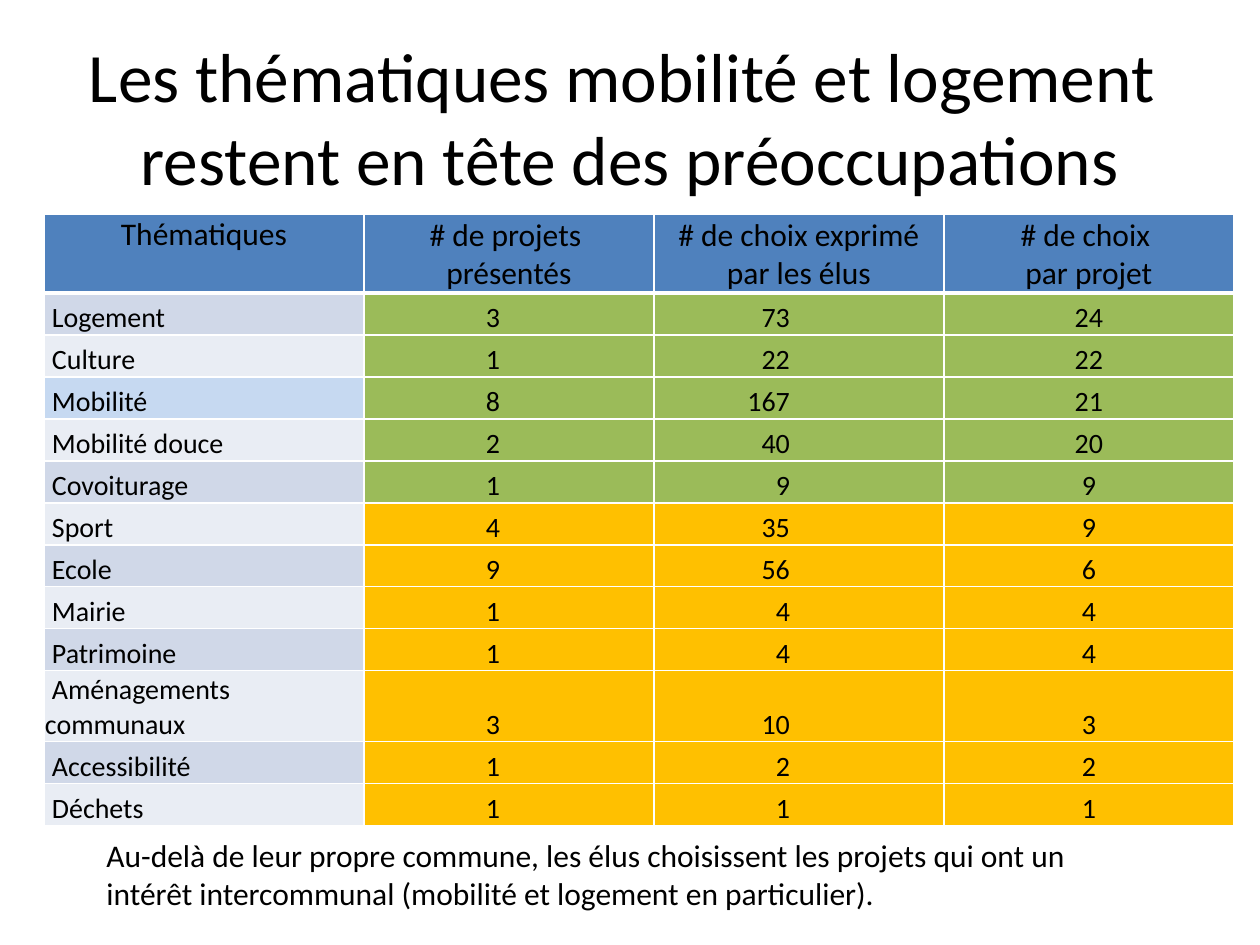
from dataclasses import dataclass

from lxml import etree
from pptx import Presentation, util as u
from pptx.dml.color import RGBColor
from pptx.enum import text
from pptx.oxml.ns import qn

PX = 914400 // 126
ALIGN = text.PP_ALIGN


@dataclass(frozen=True)
class Theme:
    font: str = "Calibri"
    ink: str = "000000"
    rule: str = "FFFFFF"
    header: str = "4F81BD"
    bands: tuple = ("D0D8E8", "E9EDF4")
    accent: str = "C6D9F1"
    high: str = "9BBB59"
    low: str = "FFC000"
    title_pt: float = 39.6
    body_pt: int = 18
    cell_pt: int = 16


theme = Theme()


def write(tf, content, size, align):
    tf.text = content
    for p in tf.paragraphs:
        p.alignment = align
        p.font.name = theme.font
        p.font.size = u.Pt(size)
        p.font.color.rgb = RGBColor.from_string(theme.ink)


def style_cell(cell, fill, top_pt=1, bottom_pt=1):
    """Set the insets, anchor, borders and fill shared by every cell."""
    cell.margin_left = cell.margin_right = cell.margin_top = PX
    cell.margin_bottom = 0
    cell.vertical_anchor = text.MSO_ANCHOR.BOTTOM
    tc_pr = cell._tc.get_or_add_tcPr()
    for side, width in (("L", 1), ("R", 1), ("T", top_pt), ("B", bottom_pt)):
        ln = etree.SubElement(tc_pr, qn(f"a:ln{side}"), w=str(u.Pt(width)))
        solid = etree.SubElement(ln, qn("a:solidFill"))
        etree.SubElement(solid, qn("a:srgbClr"), val=theme.rule)
    cell.fill.solid()
    cell.fill.fore_color.rgb = RGBColor.from_string(fill)


headers = ["Thématiques", "# de projets \nprésentés",
           "# de choix exprimé par les élus", "# de choix \npar projet"]
topics = [
    ("Logement", 3, 73, 24),
    ("Culture", 1, 22, 22),
    ("Mobilité", 8, 167, 21),
    ("Mobilité douce", 2, 40, 20),
    ("Covoiturage", 1, 9, 9),
    ("Sport", 4, 35, 9),
    ("Ecole", 9, 56, 6),
    ("Mairie", 1, 4, 4),
    ("Patrimoine", 1, 4, 4),
    ("Aménagements communaux", 3, 10, 3),
    ("Accessibilité", 1, 2, 2),
    ("Déchets", 1, 1, 1),
]
HIGH_COUNT = 5
HEADER_H, ROW_H, TALL_H = 79, 42, 71
LABEL_W, VALUE_W = 320, 290
LABEL_INDENT, VALUE_INSET = 7, 154

prs = Presentation()
prs.slide_width, prs.slide_height = 1260 * PX, 945 * PX
s = prs.slides.add_slide(prs.slide_layouts[5])

# Title
title = s.shapes.title
title.left, title.top, title.width, title.height = 63 * PX, 38 * PX, 1134 * PX, 157 * PX
tf = title.text_frame
tf.auto_size = text.MSO_AUTO_SIZE.NONE
tf.vertical_anchor = text.MSO_ANCHOR.MIDDLE
write(tf, "Les thématiques mobilité et logement \vrestent en tête des préoccupations",
      theme.title_pt, ALIGN.CENTER)

# Table of topics
heights = [HEADER_H] + [TALL_H if label.startswith("Aménagements") else ROW_H
                        for label, *_ in topics]
widths = [LABEL_W] + [VALUE_W] * 3
table = s.shapes.add_table(len(heights), len(widths), 44 * PX, 214 * PX,
                           sum(widths) * PX, sum(heights) * PX).table
table.first_row = table.horz_banding = False
for column, width in zip(table.columns, widths):
    column.width = width * PX
for row, height in zip(table.rows, heights):
    row.height = height * PX

for c, header in enumerate(headers):
    cell = table.cell(0, c)
    style_cell(cell, theme.header, bottom_pt=3)
    if c == 0:
        cell.vertical_anchor = text.MSO_ANCHOR.TOP
    write(cell.text_frame, header, theme.body_pt, ALIGN.CENTER)

for i, (label, *values) in enumerate(topics):
    top_pt = 3 if i == 0 else 1
    cell = table.cell(i + 1, 0)
    style_cell(cell, theme.accent if label == "Mobilité" else theme.bands[i % 2], top_pt)
    write(cell.text_frame, label, theme.cell_pt, ALIGN.LEFT)
    p_pr = cell.text_frame.paragraphs[0]._p.get_or_add_pPr()
    p_pr.set("indent", str(LABEL_INDENT * PX))

    for c, value in enumerate(values, start=1):
        cell = table.cell(i + 1, c)
        style_cell(cell, theme.high if i < HIGH_COUNT else theme.low, top_pt)
        last = c == len(values)
        if not last:
            cell.margin_right = VALUE_INSET * PX
        write(cell.text_frame, str(value), theme.cell_pt,
              ALIGN.CENTER if last else ALIGN.RIGHT)

# Conclusion
tf = s.shapes.add_textbox(94 * PX, 830 * PX, 1052 * PX, 89 * PX).text_frame
tf.word_wrap = True
tf.auto_size = text.MSO_AUTO_SIZE.SHAPE_TO_FIT_TEXT
write(tf, "Au-delà de leur propre commune, les élus choisissent les projets qui ont un "
      "intérêt intercommunal (mobilité et logement en particulier).",
      theme.body_pt, ALIGN.LEFT)

prs.save("out.pptx")
